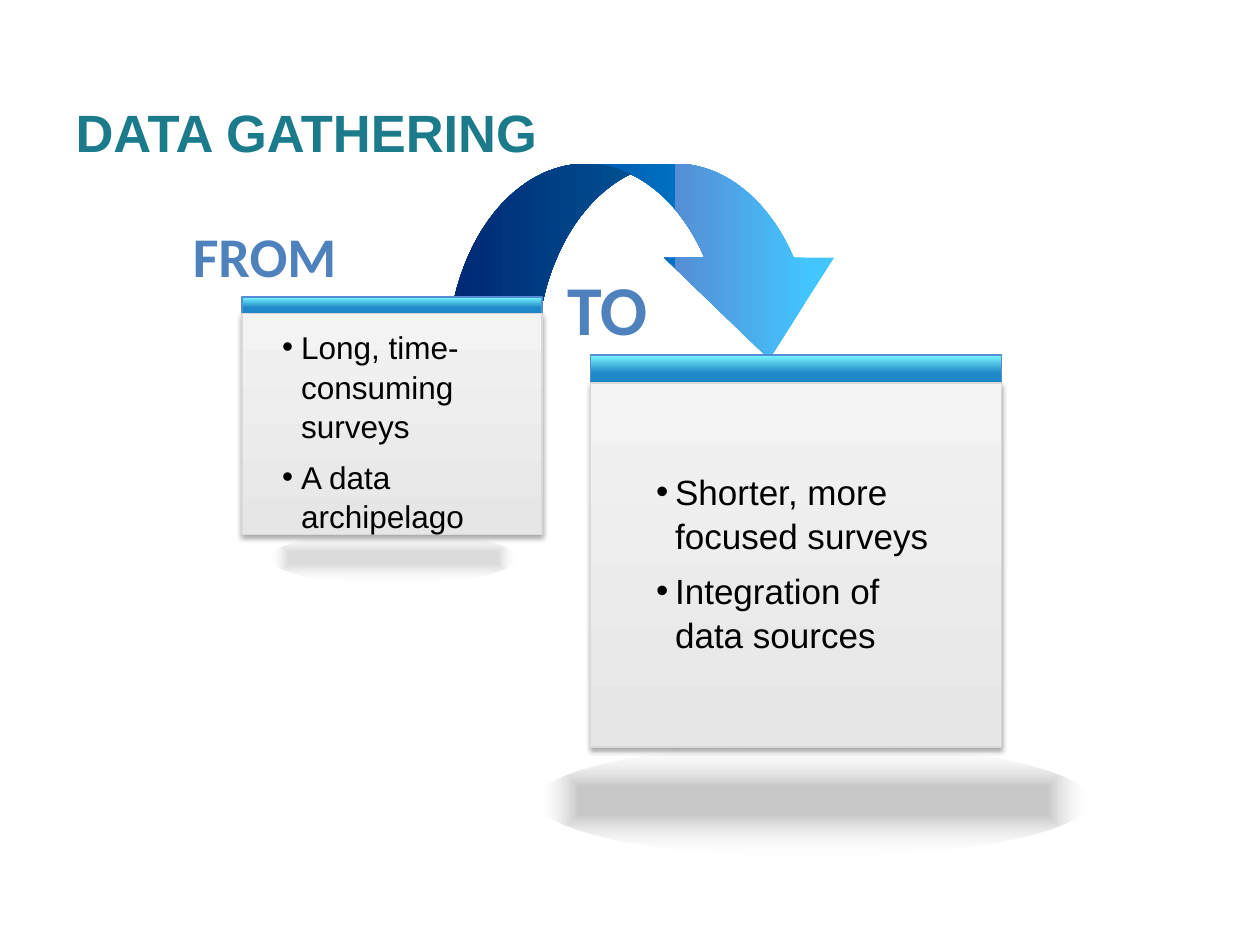
from lxml.etree import SubElement
from pptx import Presentation
from pptx.dml.color import RGBColor
from pptx.enum.shapes import MSO_SHAPE
from pptx.enum.text import MSO_ANCHOR, MSO_AUTO_SIZE, PP_ALIGN
from pptx.oxml import parse_xml
from pptx.oxml.ns import nsdecls, qn
from pptx.util import Cm, Pt

HUES = {
    "title": "1B7B8B", "label": "4F81BD", "text": "000000",
    "bar_line": "558ED5", "body_line": "D9D9D9",
}
BAR = [(44, "1F88C8"), (100, "78F8FF")]
BODY = [(0, "E6E6E6"), (100, "F3F3F3")]
ARROW = [(11, "43C5FF"), (44, "558ED5"), (44, "0070C0"), (100, "003192")]


def draw(home, kind, box, stops, angle=None, line=None):
    """Add a shape with a gradient: linear at an angle, or from the centre out.

    A stop is (percent, colour) or (percent, colour, opacity percent).
    """
    shape = home.add_shape(kind, *map(Cm, box))
    shape.shadow.inherit = False
    if line:
        shape.line.color.rgb = RGBColor.from_string(HUES[line])
        shape.line.width = Pt(0.75)
    else:
        shape.line.fill.background()
    marks = ""
    for place, hue, *clear in stops:
        alpha = "".join(f'<a:alpha val="{c * 1000}"/>' for c in clear)
        marks += f'<a:gs pos="{place * 1000}"><a:srgbClr val="{hue}">{alpha}</a:srgbClr></a:gs>'
    if angle is None:
        way = '<a:path path="shape"><a:fillToRect l="50000" t="50000" r="50000" b="50000"/></a:path>'
    else:
        way = f'<a:lin ang="{angle * 60000}" scaled="0"/>'
    fill = parse_xml(f'<a:gradFill {nsdecls("a")} rotWithShape="1"><a:gsLst>{marks}</a:gsLst>{way}</a:gradFill>')
    shape.element.spPr.find(qn("a:prstGeom")).addnext(fill)
    return shape


def write(para, text, size, face, hue, bold=False):
    run = para.add_run()
    run.text = text
    looks = {"size": Pt(size), "name": face, "bold": bold}
    for name, value in looks.items():
        setattr(run.font, name, value)
    run.font.color.rgb = RGBColor.from_string(HUES[hue])


deck = Presentation()
deck.slide_width, deck.slide_height = Cm(25.4), Cm(19.05)
slide = deck.slides.add_slide(deck.slide_layouts[5])
shapes = slide.shapes

title = shapes.title
places = zip(("left", "top", "width", "height"), (1.27, 1.07, 23.29, 3.18))
for name, value in places:
    setattr(title, name, Cm(value))
title.text_frame.vertical_anchor = MSO_ANCHOR.MIDDLE
head = title.text_frame.paragraphs[0]
head.alignment = PP_ALIGN.LEFT
write(head, "DATA GATHERING", 30, "Arial", "title", True)

# Labels
for text, size, box in [
    ("TO", 40, (11.15, 5.23, 2.18, 1.96)),
    ("FROM", 32, (3.61, 4.34, 3.45, 1.63)),
]:
    frame = shapes.add_textbox(*map(Cm, box)).text_frame
    frame.word_wrap = False
    frame.auto_size = MSO_AUTO_SIZE.SHAPE_TO_FIT_TEXT
    para = frame.paragraphs[0]
    para.alignment = PP_ALIGN.CENTER
    write(para, text, size, "Calibri", "label", True)

arrow = draw(shapes, MSO_SHAPE.CURVED_DOWN_ARROW, (9.02, 3.3, 8.2, 3.94), ARROW, 180)
for i, value in enumerate((0.457, 0.869, 0.519)):
    arrow.adjustments[i] = value

# Panels: a bar on top of a body
for left, width, bar, body in [
    (4.88, 6.05, (5.99, 0.38), (6.32, 4.45)),
    (11.91, 8.28, (7.16, 0.64), (7.72, 7.34)),
]:
    group = shapes.add_group_shape().shapes
    for (top, height), stops, line in [(bar, BAR, "bar_line"), (body, BODY, "body_line")]:
        box = (left, top, width, height)
        panel = draw(group, MSO_SHAPE.RECTANGLE, box, stops, 270, line)
    glow = panel.element.spPr.find(qn("a:effectLst"))
    glow.append(parse_xml(
        f'<a:outerShdw {nsdecls("a")} blurRad="{Pt(3.1)}" dist="{Pt(1.8)}" dir="5400000" '
        'algn="t" rotWithShape="0"><a:srgbClr val="000000"><a:alpha val="35000"/>'
        '</a:srgbClr></a:outerShdw>'))

# Bullet lists
for box, size, items in [
    ((12.98, 9.32, 6.5, 3.89), 20,
     ["Shorter, more focused surveys", "Integration of data sources"]),
    ((5.44, 6.45, 5.38, 4.32), 18,
     ["Long, time-consuming surveys", "A data archipelago"]),
]:
    frame = shapes.add_textbox(*map(Cm, box)).text_frame
    frame.word_wrap = True
    frame.auto_size = MSO_AUTO_SIZE.SHAPE_TO_FIT_TEXT
    for i, item in enumerate(items):
        para = frame.add_paragraph() if i else frame.paragraphs[0]
        props = para._p.get_or_add_pPr()
        props.set("marL", str(Cm(0.38)))
        props.set("indent", str(-Cm(0.38)))
        SubElement(props, qn("a:buFont"), typeface="Arial")
        SubElement(props, qn("a:buChar"), char="•")
        para.line_spacing = 1.05
        para.space_after = Pt(6)
        write(para, item, size, "Arial", "text")

# Soft shade under each panel
for box, depth in [((10.82, 15.01, 11.15, 2.26), 22), ((5.44, 10.74, 4.98, 1.02), 14)]:
    draw(shapes, MSO_SHAPE.OVAL, box, [(24, "000000", depth), (100, "FFFFFF", 0)])

deck.save("out.pptx")
